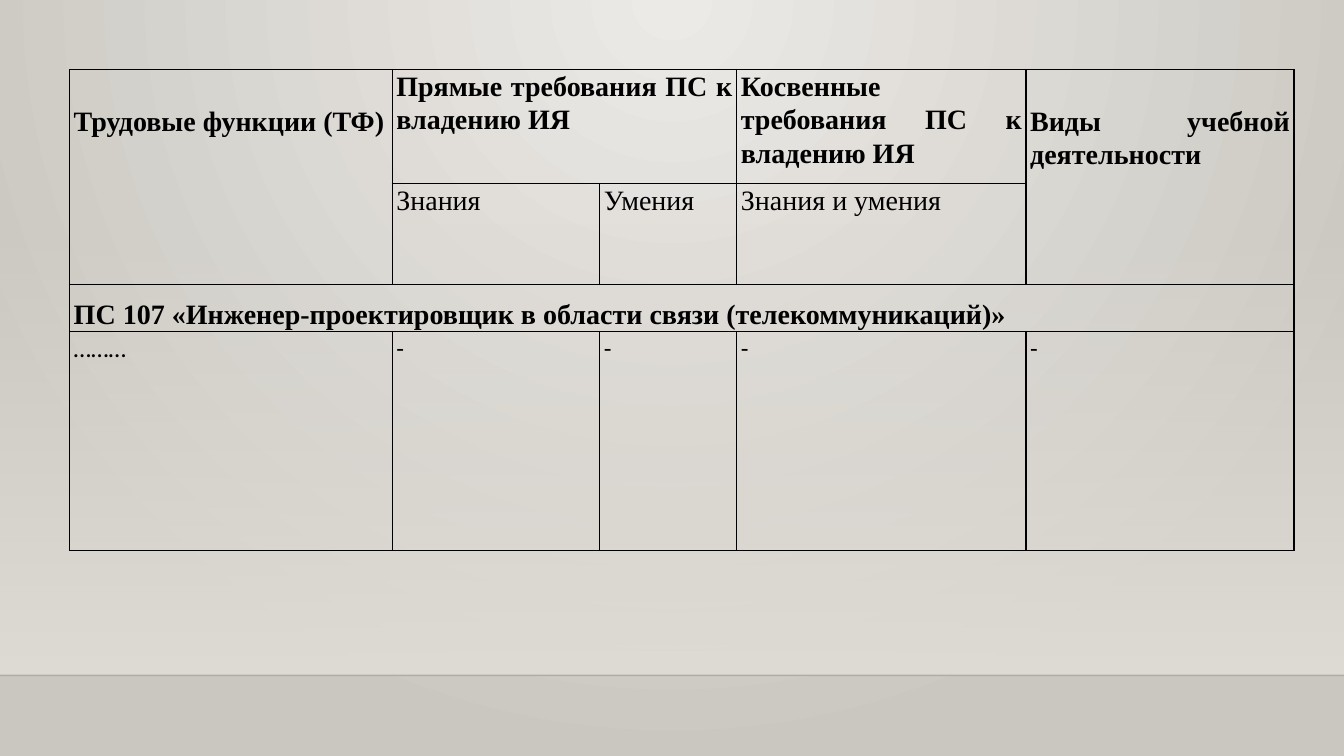
from lxml import etree
from pptx import Presentation
from pptx.dml.color import RGBColor
from pptx.enum import shapes, text
from pptx.oxml.ns import qn
from pptx.util import Pt

SLIDE_W, SLIDE_H = 960, 540
HORIZON = 482.4
COLUMNS = [230.4, 148.3, 97.9, 206.6, 191.5]
ROWS = [81.4, 54, 33.8, 156.2]
HEADING_DROP = 24.5


def color(value):
    return RGBColor.from_string(value)


def add_xml(parent, tag, **attributes):
    return etree.SubElement(parent, qn(tag), attributes)


def set_gradient(owner, fill, stops, direction, **attributes):
    """Fill owner with (position, colour, opacity) stops in percent; return the direction element."""
    fill.gradient()
    gradient = next(owner.iter(qn("a:gradFill")))
    for child in list(gradient):
        gradient.remove(child)
    stop_list = add_xml(gradient, "a:gsLst")
    for position, value, opacity in stops:
        stop = add_xml(stop_list, "a:gs", pos=str(position * 1000))
        rgb = add_xml(stop, "a:srgbClr", val=value)
        if opacity < 100:
            add_xml(rgb, "a:alpha", val=str(opacity * 1000))
    return add_xml(gradient, direction, **attributes)


def draw_backdrop(slide):
    glow = set_gradient(slide._element, slide.background.fill,
                        [(0, "ECEAE7", 100), (100, "CAC7C1", 100)],
                        "a:path", path="circle")
    add_xml(glow, "a:fillToRect", l="43000", t="0", r="43000", b="100000")

    wall_top = 159.1
    wall = slide.shapes.add_shape(shapes.MSO_SHAPE.RECTANGLE, 0, Pt(wall_top),
                                  Pt(SLIDE_W), Pt(HORIZON - wall_top))
    wall.shadow.inherit = False
    wall.line.fill.background()
    set_gradient(wall._element, wall.fill,
                 [(0, "DFDBD5", 0), (100, "DFDBD5", 100)],
                 "a:lin", ang="5400000", scaled="0")

    horizon = slide.shapes.add_connector(shapes.MSO_CONNECTOR.STRAIGHT, 0, Pt(HORIZON),
                                         Pt(SLIDE_W), Pt(HORIZON))
    horizon.line.width = Pt(1)
    horizon.line.color.rgb = color("000001")
    add_xml(next(horizon._element.iter(qn("a:srgbClr"))), "a:alpha", val="20000")
    add_xml(horizon._element.spPr, "a:effectLst")


def set_borders(cell):
    properties = cell._tc.get_or_add_tcPr()
    for index, side in enumerate(("a:lnL", "a:lnR", "a:lnT", "a:lnB")):
        border = add_xml(properties, side, w="12700")
        fill = add_xml(border, "a:solidFill")
        add_xml(fill, "a:srgbClr", val="000000")
        properties.insert(index, border)


def write(cell, words, size=20, font="Times New Roman", bold=False, spacing=1.07, drop=0):
    """Put justified text in a cell, lowered by drop points."""
    cell.margin_top = Pt(drop)
    paragraph = cell.text_frame.paragraphs[0]
    paragraph.alignment = text.PP_ALIGN.JUSTIFY
    paragraph.line_spacing = spacing
    run = paragraph.add_run()
    run.text = words
    run.font.size = Pt(size)
    run.font.name = font
    run.font.bold = bold
    run.font.color.rgb = color("000000")


def draw_requirements(slide, left, top):
    table = slide.shapes.add_table(len(ROWS), len(COLUMNS), Pt(left), Pt(top),
                                   Pt(sum(COLUMNS)), Pt(sum(ROWS))).table
    table.first_row = table.horz_banding = False
    for column, width in zip(table.columns, COLUMNS):
        column.width = Pt(width)
    for row, height in zip(table.rows, ROWS):
        row.height = Pt(height)
    for cell in table.iter_cells():
        cell.margin_left = cell.margin_right = Pt(3)
        cell.margin_top = cell.margin_bottom = 0
        cell.fill.background()
        set_borders(cell)

    for first, last in [((0, 0), (1, 0)), ((0, 1), (0, 2)),
                        ((0, 4), (1, 4)), ((2, 0), (2, 4))]:
        table.cell(*first).merge(table.cell(*last))

    for column, heading, drop in [
        (0, "Трудовые функции (ТФ)", HEADING_DROP),
        (1, "Прямые требования ПС к владению ИЯ", 0),
        (3, "Косвенные требования ПС к владению ИЯ", 0),
        (4, "Виды учебной деятельности", HEADING_DROP),
    ]:
        write(table.cell(0, column), heading, bold=True, drop=drop)
    for column, subheading in enumerate(("Знания", "Умения", "Знания и умения"), 1):
        write(table.cell(1, column), subheading)
    write(table.cell(2, 0),
          "ПС 107 «Инженер-проектировщик в области связи (телекоммуникаций)»",
          bold=True, spacing=1.5)
    for column, entry in enumerate(["………"] + ["-"] * 4):
        write(table.cell(3, column), entry, size=18, font="Calibri")


def main():
    presentation = Presentation()
    presentation.slide_width, presentation.slide_height = Pt(SLIDE_W), Pt(SLIDE_H)
    slide = presentation.slides.add_slide(presentation.slide_layouts[6])
    draw_backdrop(slide)
    draw_requirements(slide, 49.7, 49.7)
    presentation.save("out.pptx")


if __name__ == "__main__":
    main()
